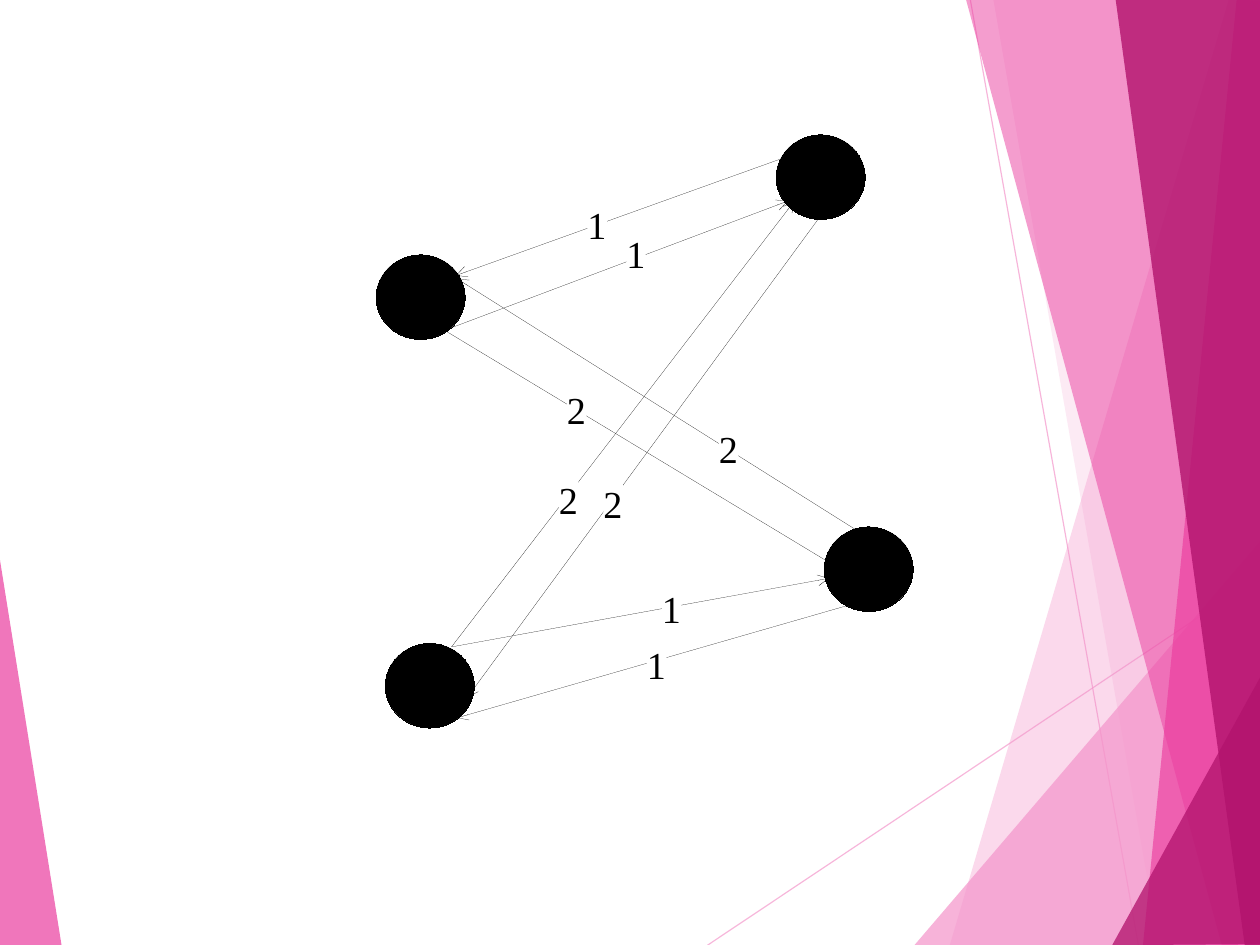
from pptx import Presentation
from pptx.dml.color import RGBColor
from pptx.enum.shapes import MSO_CONNECTOR as CONN, MSO_SHAPE as SHAPE
from pptx.enum.text import MSO_ANCHOR, MSO_AUTO_SIZE as FIT, PP_ALIGN as ALIGN
from pptx.oxml.ns import qn
from pptx.util import Inches, Pt
from lxml.etree import SubElement

BLACK = RGBColor(0x00, 0x00, 0x00)
WHITE = RGBColor(0xFF, 0xFF, 0xFF)
LIGHT_PINK = RGBColor(0xF4, 0x96, 0xCB)
PINK = RGBColor(0xEB, 0x3D, 0x9F)
MAGENTA = RGBColor(0xB2, 0x13, 0x6D)

CM_PER_INCH = 2.54
WIDTH, HEIGHT = 28 / CM_PER_INCH, 21 / CM_PER_INCH
NODE_W, NODE_H = 0.78, 0.74
LABEL_W, LABEL_H = 0.17, 0.37

RAYS = [(6.19, 8.27, 11.04, 5.03), (8.49, 0, 9.96, 8.27)]
FACETS = [
    ([(10.75, 0), (8.31, 8.27), (11.04, 8.28), (11.03, 0.01)], LIGHT_PINK, 36),
    ([(8.69, -0.01), (10.14, 8.27), (11.03, 8.27), (11.03, -0.01)], LIGHT_PINK, 20),
    ([(8, 8.27), (11.03, 4.73), (11.03, 8.27)], LIGHT_PINK, 72),
    ([(8.45, -0.01), (10.69, 8.27), (11.04, 8.26), (11.04, -0.01)], PINK, 50),
    ([(10.82, -0.01), (10, 8.27), (11.04, 8.27), (11.03, -0.01)], PINK, 66),
    ([(9.76, -0.01), (10.89, 8.27), (11.04, 8.27), (11.03, -0.01)], MAGENTA, 80),
    ([(9.73, 8.27), (11.04, 5.9), (11.05, 8.26)], MAGENTA, 76),
    ([(-0.01, 4.84), (0.54, 8.28), (-0.01, 8.27)], PINK, 70),
]
EDGES = [
    (3.89, 2.89, 6.89, 1.76),
    (3.89, 2.89, 7.32, 4.96),
    (3.95, 5.66, 6.95, 1.76),
    (3.95, 5.66, 7.25, 5.06),
    (6.86, 1.38, 3.99, 2.41),
    (7.23, 1.82, 4.09, 6.1),
    (7.56, 4.68, 4, 2.44),
    (7.58, 5.25, 4, 6.28),
]
WEIGHTS = [
    ("1", 5.14, 1.76), ("2", 4.96, 3.38), ("2", 4.89, 4.17), ("2", 6.29, 3.72),
    ("2", 5.28, 4.2), ("1", 5.48, 2.02), ("1", 5.79, 5.12), ("1", 5.66, 5.61),
]
NODES = [(3.29, 2.23), (6.79, 1.18), (3.37, 5.63), (7.21, 4.61)]


class GraphSlide:
    font = "Times New Roman"
    size = Pt(24)

    def __init__(self, prs):
        self.shapes = prs.slides.add_slide(prs.slide_layouts[6]).shapes

    def set_alpha(self, fill, percent):
        color = fill._xPr.find(qn("a:solidFill"))[0]
        SubElement(color, qn("a:alpha"), val=str(percent * 1000))

    def hairline(self, sp):
        sp.line.color.rgb = BLACK
        ln = sp.line._get_or_add_ln()
        ln.set("w", "0")
        return ln

    def line(self, ends):
        sp = self.shapes.add_connector(CONN.STRAIGHT, *map(Inches, ends))
        SubElement(sp._element.spPr, qn("a:effectLst"))
        return sp

    def ray(self, ends):
        sp = self.line(ends)
        sp.line.color.rgb = LIGHT_PINK
        sp.line.width = Pt(0.75)
        self.set_alpha(sp.line.fill, 70)

    def arrow(self, ends):
        ln = self.hairline(self.line(ends))
        SubElement(ln, qn("a:tailEnd"), type="arrow")

    def facet(self, points, color, percent):
        start, *rest = [(Inches(x), Inches(y)) for x, y in points]
        builder = self.shapes.build_freeform(*start)
        builder.add_line_segments(rest)
        sp = builder.convert_to_shape()
        sp.shadow.inherit = False
        sp.fill.solid()
        sp.fill.fore_color.rgb = color
        self.set_alpha(sp.fill, percent)
        sp.line.fill.background()

    def weight(self, text, x, y):
        sp = self.shapes.add_textbox(*map(Inches, (x, y, LABEL_W, LABEL_H)))
        sp.fill.solid()
        sp.fill.fore_color.rgb = WHITE
        tf = sp.text_frame
        tf.margin_left = tf.margin_right = tf.margin_top = tf.margin_bottom = 0
        tf.word_wrap = False
        tf.auto_size = FIT.SHAPE_TO_FIT_TEXT
        tf.vertical_anchor = MSO_ANCHOR.TOP
        p = tf.paragraphs[0]
        p.text = text
        p.alignment = ALIGN.LEFT
        p.font.name = self.font
        p.font.size = self.size
        p.font.color.rgb = BLACK

    def node(self, x, y):
        sp = self.shapes.add_shape(SHAPE.OVAL, *map(Inches, (x, y, NODE_W, NODE_H)))
        sp.shadow.inherit = False
        sp.fill.solid()
        sp.fill.fore_color.rgb = BLACK
        self.hairline(sp)


def main():
    prs = Presentation()
    prs.slide_width = Inches(WIDTH)
    prs.slide_height = Inches(HEIGHT)
    s = GraphSlide(prs)
    for ends in RAYS:
        s.ray(ends)
    for facet in FACETS:
        s.facet(*facet)
    for ends in EDGES:
        s.arrow(ends)
    for weight in WEIGHTS:
        s.weight(*weight)
    for node in NODES:
        s.node(*node)
    prs.save("out.pptx")


if __name__ == "__main__":
    main()
